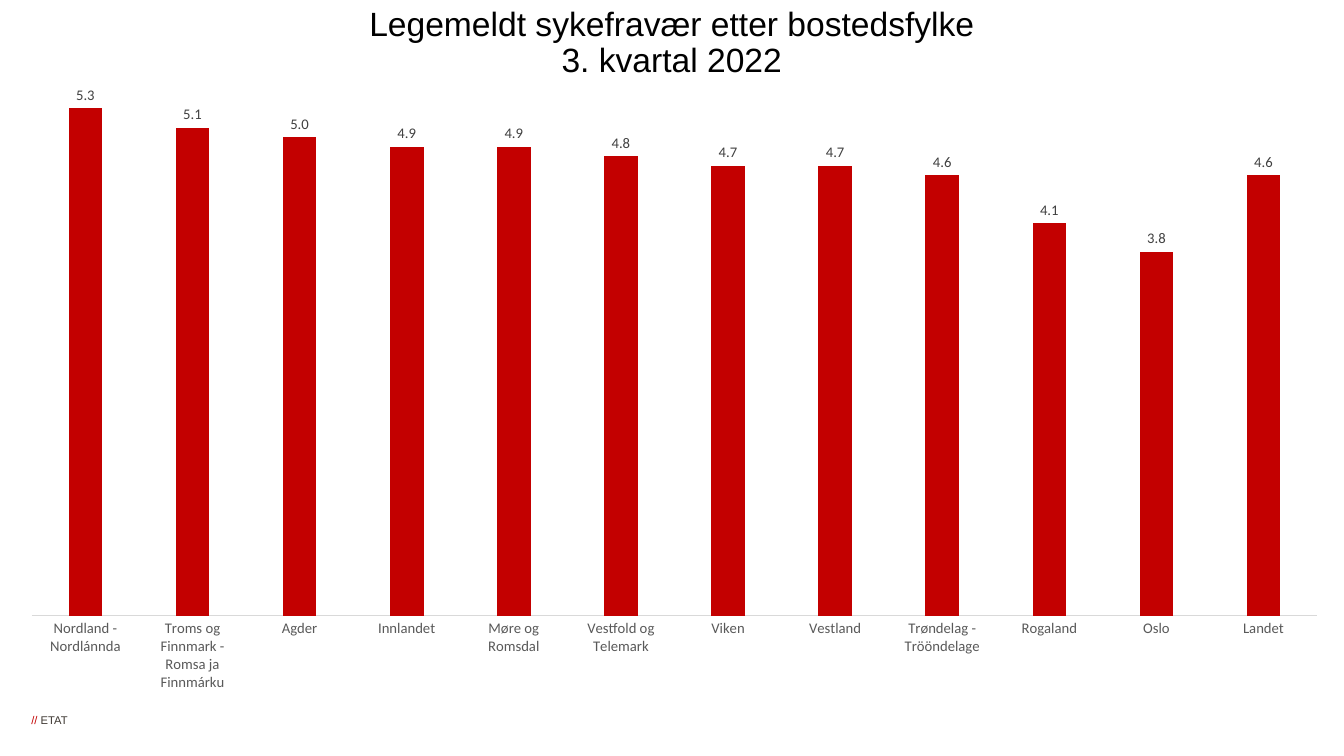
"""Build a slide with a column chart of sick leave by county of residence."""
from dataclasses import dataclass

from lxml import etree
from pptx import Presentation
from pptx.chart.data import CategoryChartData
from pptx.dml.color import RGBColor
from pptx.enum.chart import XL_CHART_TYPE, XL_LABEL_POSITION, XL_TICK_MARK
from pptx.enum.text import MSO_ANCHOR, PP_ALIGN
from pptx.oxml.ns import qn
from pptx.util import Cm, Pt

COLUMN = XL_CHART_TYPE.COLUMN_CLUSTERED
OUTSIDE_END = XL_LABEL_POSITION.OUTSIDE_END
NO_TICK = XL_TICK_MARK.NONE
MIDDLE = MSO_ANCHOR.MIDDLE
CENTER = PP_ALIGN.CENTER


@dataclass(frozen=True)
class Theme:
    red: RGBColor = RGBColor(0xC3, 0x00, 0x00)
    black: RGBColor = RGBColor(0x00, 0x00, 0x00)
    footer: RGBColor = RGBColor(0x3E, 0x38, 0x32)
    value: RGBColor = RGBColor(0x40, 0x40, 0x40)
    category: RGBColor = RGBColor(0x59, 0x59, 0x59)
    axis: RGBColor = RGBColor(0xD9, 0xD9, 0xD9)
    text_font: str = "Arial"
    chart_font: str = "Calibri"
    title_size: Pt = Pt(24)
    chart_size: Pt = Pt(10.5)
    footer_size: Pt = Pt(8)
    axis_width: Pt = Pt(0.75)


theme = Theme()

RATES = {
    "Nordland - Nordlánnda": 5.3,
    "Troms og Finnmark - Romsa ja Finnmárku": 5.1,
    "Agder": 5.0,
    "Innlandet": 4.9,
    "Møre og Romsdal": 4.9,
    "Vestfold og Telemark": 4.8,
    "Viken": 4.7,
    "Vestland": 4.7,
    "Trøndelag - Trööndelage": 4.6,
    "Rogaland": 4.1,
    "Oslo": 3.8,
    "Landet": 4.6,
}


def style_font(font, name, size, color):
    font.name = name
    font.size = size
    font.color.rgb = color


def add_text_box(slide, left, top, width, height):
    tf = slide.shapes.add_textbox(Cm(left), Cm(top), Cm(width), Cm(height)).text_frame
    tf.margin_left = tf.margin_right = tf.margin_top = tf.margin_bottom = 0
    tf.vertical_anchor = MIDDLE
    return tf


prs = Presentation()
prs.slide_width = Cm(33.87)
prs.slide_height = Cm(19.05)
slide = prs.slides.add_slide(prs.slide_layouts[6])

tf = add_text_box(slide, 0.79, 17.98, 1.2, 0.33)
tf.word_wrap = False
p = tf.paragraphs[0]
for text, color in (("// ", theme.red), ("ETAT", theme.footer)):
    r = p.add_run()
    r.text = text
    style_font(r.font, theme.text_font, theme.footer_size, color)

tf = add_text_box(slide, 5.28, -0.25, 23.3, 2.7)
tf.word_wrap = True
p = tf.paragraphs[0]
p.alignment = CENTER
p.line_spacing = 0.9
for i, text in enumerate(("Legemeldt sykefravær etter bostedsfylke", "3. kvartal 2022")):
    if i:
        p.add_line_break()
    r = p.add_run()
    r.text = text
    style_font(r.font, theme.text_font, theme.title_size, theme.black)

data = CategoryChartData(number_format="0.0")
data.categories = list(RATES)
data.add_series("Sykefravær", list(RATES.values()))
chart = slide.shapes.add_chart(
    COLUMN, Cm(0.13), Cm(0.79), Cm(33.74), Cm(16.97), data
).chart
chart.has_legend = False
chart.has_title = False
style_font(chart.font, theme.chart_font, theme.chart_size, theme.black)

value_axis = chart.value_axis
value_axis.visible = False
value_axis.has_major_gridlines = False
value_axis.minimum_scale = 0
value_axis.maximum_scale = 6

category_axis = chart.category_axis
category_axis.major_tick_mark = NO_TICK
category_axis.minor_tick_mark = NO_TICK
category_axis.format.line.color.rgb = theme.axis
category_axis.format.line.width = theme.axis_width
style_font(category_axis.tick_labels.font, theme.chart_font, theme.chart_size, theme.category)

plot = chart.plots[0]
plot.gap_width = 219
plot.overlap = -27
plot.vary_by_categories = False
fill = plot.series[0].format.fill
fill.solid()
fill.fore_color.rgb = theme.red

labels = plot.series[0].data_labels
labels.show_value = True
labels.position = OUTSIDE_END
labels.number_format = "0.0"
labels.number_format_is_linked = False
style_font(labels.font, theme.chart_font, theme.chart_size, theme.value)

plot_area = chart._chartSpace.chart.plotArea
for layout in plot_area.findall(qn("c:layout")):
    plot_area.remove(layout)
layout = etree.Element(qn("c:layout"))
manual = etree.SubElement(layout, qn("c:manualLayout"))
for tag, value in (
    ("layoutTarget", "inner"),
    ("xMode", "edge"),
    ("yMode", "edge"),
    ("x", "0.02"),
    ("y", "0.015"),
    ("w", "0.96"),
    ("h", "0.853"),
):
    etree.SubElement(manual, qn(f"c:{tag}")).set("val", value)
plot_area.insert(0, layout)

prs.save("out.pptx")
